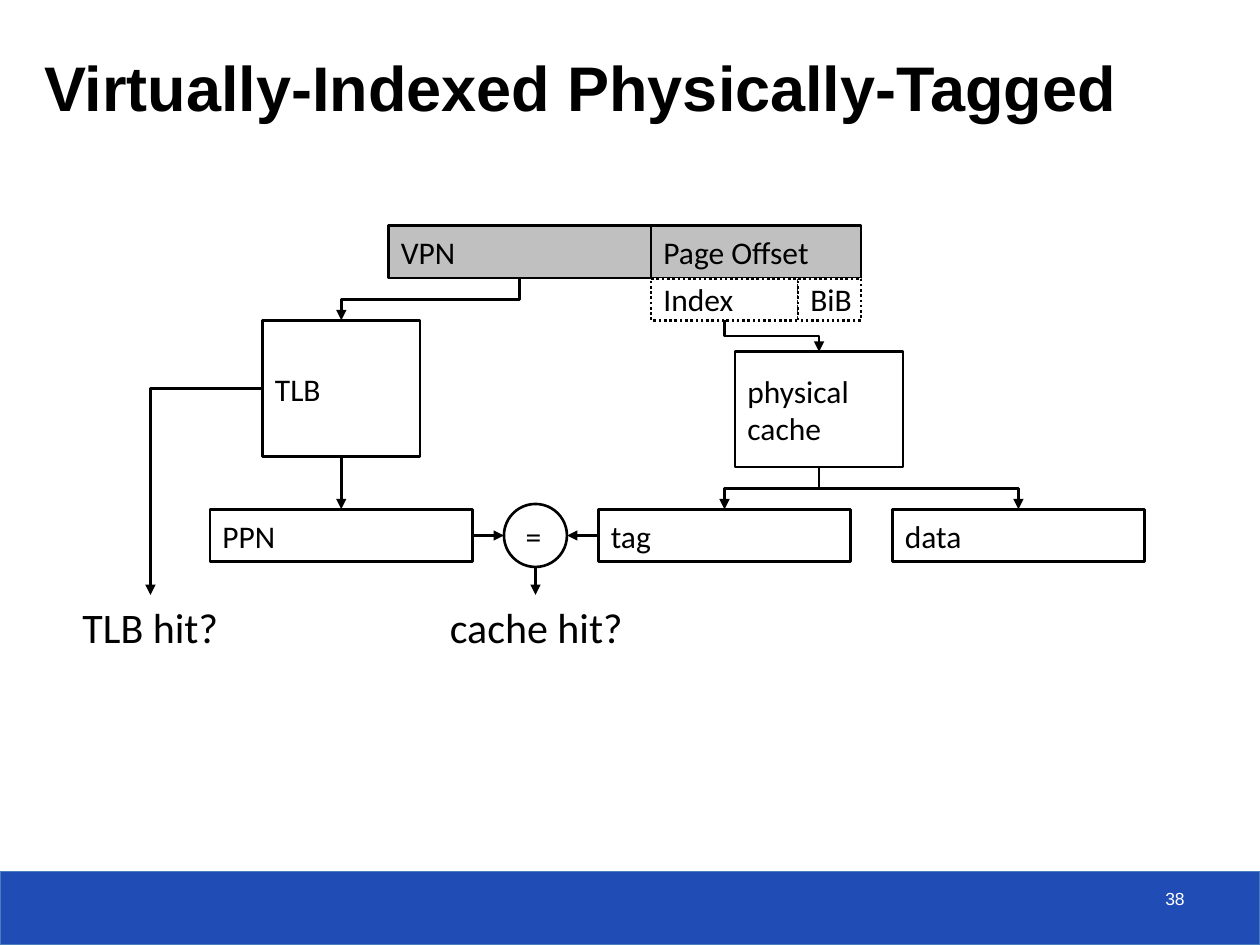
from lxml import etree
from pptx import Presentation
from pptx.dml.color import RGBColor
from pptx.enum.dml import MSO_LINE
from pptx.enum.shapes import MSO_CONNECTOR, MSO_SHAPE
from pptx.enum.text import MSO_ANCHOR, MSO_AUTO_SIZE, PP_ALIGN
from pptx.oxml.ns import qn
from pptx.util import Pt

RECT, OVAL = MSO_SHAPE.RECTANGLE, MSO_SHAPE.OVAL
STRAIGHT, ELBOW = MSO_CONNECTOR.STRAIGHT, MSO_CONNECTOR.ELBOW
DOTS = MSO_LINE.ROUND_DOT
TOP, MID, BOTTOM = MSO_ANCHOR.TOP, MSO_ANCHOR.MIDDLE, MSO_ANCHOR.BOTTOM
LEFT, RIGHT = PP_ALIGN.LEFT, PP_ALIGN.RIGHT
NONE = MSO_AUTO_SIZE.NONE

COLORS = {"ink": "000000", "white": "FFFFFF", "gray": "C0C0C0",
          "bar": "204DB5", "edge": "4B7EBC"}

# Content: name, text, left, top, width, height, fill, dotted
ROW, HIGH = 291, 30
BOXES = [
    ("vpn", "VPN", 222, 129, 150, HIGH, "gray", False),
    ("offset", "Page Offset", 372, 129, 120, HIGH, "gray", False),
    ("tlb", "TLB", 150, 183, 90, 78, "white", False),
    ("ppn", "PPN", 120, ROW, 150, HIGH, "white", False),
    ("index", "Index", 372, 159, 84, 24, "white", True),
    ("bib", "BiB", 456, 159, 36, 24, "white", True),
    ("cache", "physical\ncache", 420, 201, 96, 66, "white", False),
    ("tag", "tag", 342, ROW, 144, HIGH, "white", False),
    ("data", "data", 510, ROW, 144, HIGH, "white", False),
]
DROPS = [("vpn", "tlb"), ("index", "cache"), ("cache", "tag"), ("cache", "data")]
HITS = [("TLB hit?", 40, 93), ("cache hit?", 250, 114)]
HIT_TOP = 340

BODY = {"name": "Calibri", "size": Pt(18)}
LARGE = {"name": "Calibri", "size": Pt(24)}
HEAD = {"name": "Arial", "size": Pt(36), "bold": True}
SMALL = {"name": "Arial", "size": Pt(10)}


def rgb(key):
    return RGBColor.from_string(COLORS[key])


def write(shape, text, font, color="ink", align=LEFT, **frame):
    tf = shape.text_frame
    tf.text = text
    for key, val in frame.items():
        setattr(tf, key, val)
    for par in tf.paragraphs:
        par.alignment = align
        for key, val in font.items():
            setattr(par.font, key, val)
        par.font.color.rgb = rgb(color)


def block(shapes, kind, area, fill, edge="ink", width=1.5):
    shape = shapes.add_shape(kind, *map(Pt, area))
    shape.shadow.inherit = False
    shape.fill.solid()
    shape.fill.fore_color.rgb = rgb(fill)
    shape.line.color.rgb = rgb(edge)
    shape.line.width = Pt(width)
    return shape


def arrow(shapes, start, end, kind=STRAIGHT):
    con = shapes.add_connector(kind, *map(Pt, (*start, *end)))
    con.line.color.rgb = rgb("ink")
    con.line.width = Pt(1.5)
    prop = con.element.spPr
    etree.SubElement(prop.find(qn("a:ln")), qn("a:tailEnd"), type="triangle")
    etree.SubElement(prop, qn("a:effectLst"))
    return con


def drop(shapes, start, end):
    """Elbow arrow that leaves and arrives vertically."""
    (x1, y1), (x2, y2) = start, end
    wide, high = abs(x2 - x1), y2 - y1
    left, top = (x1 + x2 - high) / 2, (y1 + y2 - wide) / 2
    con = arrow(shapes, (left, top), (left + high, top + wide), ELBOW)
    xfrm = con.element.spPr.find(qn("a:xfrm"))
    xfrm.set("rot", str((270 if x2 > x1 else 90) * 60000))
    if x2 > x1:
        xfrm.set("flipH", "1")


def main():
    prs = Presentation()
    prs.slide_width, prs.slide_height = Pt(720), Pt(540)
    slide = prs.slides.add_slide(prs.slide_layouts[5])
    shapes = slide.shapes

    # Title
    title = shapes.title
    title.left, title.top, title.width, title.height = map(Pt, (18, 14.4, 664, 60))
    title.fill.solid()
    title.fill.fore_color.rgb = rgb("white")
    tint = title.element.spPr.find(".//" + qn("a:srgbClr"))
    etree.SubElement(tint, qn("a:alpha"), val="75000")
    write(title, "Virtually-Indexed Physically-Tagged", HEAD,
          vertical_anchor=BOTTOM, word_wrap=True, auto_size=NONE)

    # Footer bar and slide number
    block(shapes, RECT, (0, 498, 720, 42), "bar", "edge", 0.75)
    number = shapes.add_textbox(*map(Pt, (516, 504, 168, 24)))
    write(number, "38", SMALL, "white", RIGHT, vertical_anchor=TOP, word_wrap=True)

    # Address fields, tables and results
    box, area = {}, {}
    for name, text, x, y, w, h, fill, dotted in BOXES:
        area[name] = x, y, w, h
        box[name] = block(shapes, RECT, area[name], fill)
        if dotted:
            box[name].line.dash_style = DOTS
        write(box[name], text, BODY, vertical_anchor=MID, word_wrap=False)

    # Comparator, centred between PPN and tag
    size = 36
    mid_y = ROW + HIGH / 2
    mid_x = (area["ppn"][0] + area["ppn"][2] + area["tag"][0]) / 2
    near, far = mid_x - size / 2, mid_x + size / 2
    ring = block(shapes, OVAL, (near, mid_y - size / 2, size, size), "white")
    write(ring, "=", BODY, vertical_anchor=MID, word_wrap=False)

    # Elbow arrows from one box down to the next
    for src, dst in DROPS:
        x, y, w, h = area[src]
        left, top, wide, _ = area[dst]
        drop(shapes, (x + w / 2, y + h), (left + wide / 2, top))

    # Straight arrows
    link = arrow(shapes, (195, 261), (195, ROW))
    link.begin_connect(box["tlb"], 2)
    link.end_connect(box["ppn"], 0)
    for name, site, stop in [("ppn", 3, near), ("tag", 1, far)]:
        edge = area[name][0] + (area[name][2] if site == 3 else 0)
        link = arrow(shapes, (edge, mid_y), (stop, mid_y))
        link.begin_connect(box[name], site)
    arrow(shapes, (mid_x, mid_y + size / 2), (mid_x, HIT_TOP))

    # Hit signals
    x, y, _, h = area["tlb"]
    side = arrow(shapes, (x, y + h / 2), (86, HIT_TOP), ELBOW)
    side.element.spPr.find(qn("a:prstGeom")).set("prst", "bentConnector2")
    for text, left, wide in HITS:
        label = shapes.add_textbox(*map(Pt, (left, HIT_TOP, wide, 36)))
        write(label, text, LARGE, word_wrap=False)

    prs.save("out.pptx")


if __name__ == "__main__":
    main()
